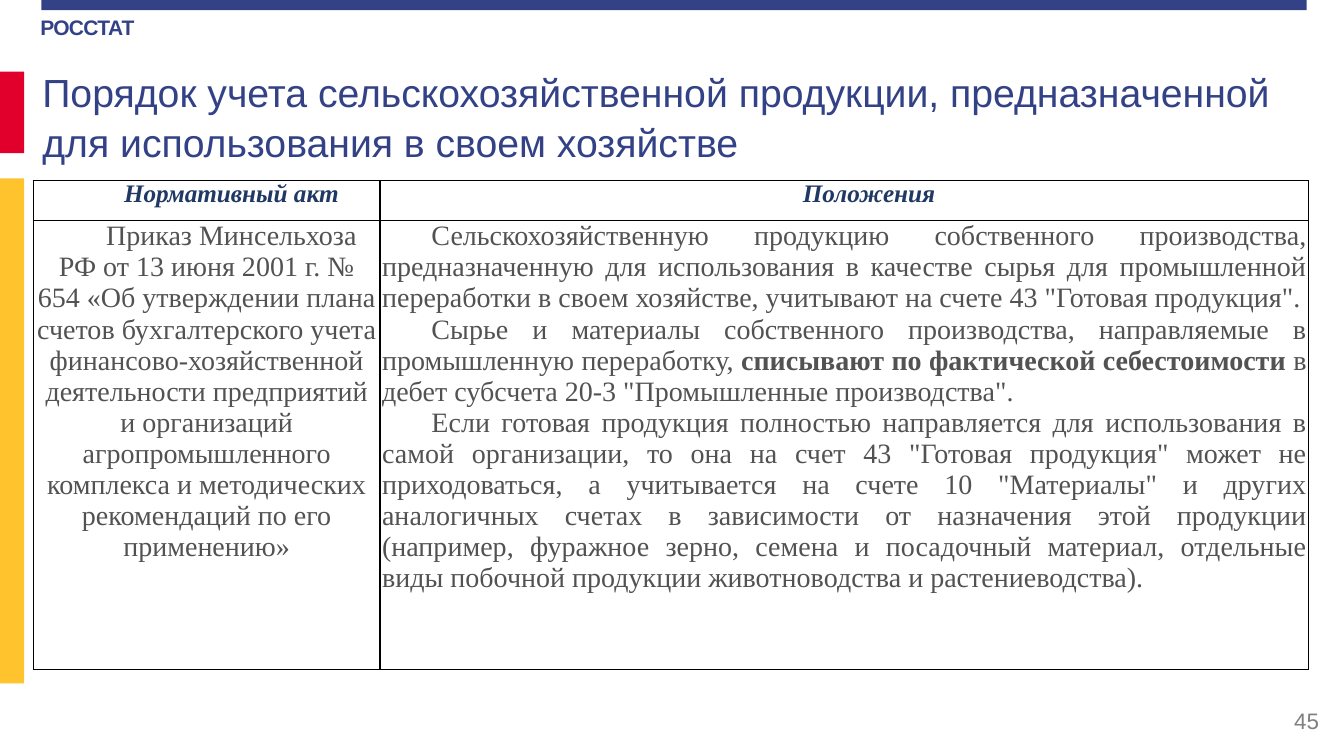
"""Build the slide on accounting for farm produce kept for own use."""
from lxml import etree
from pptx import Presentation
from pptx.dml.color import RGBColor
from pptx.enum.shapes import MSO_SHAPE
from pptx.enum.text import MSO_ANCHOR, MSO_AUTO_SIZE, PP_ALIGN
from pptx.oxml.ns import qn
from pptx.util import Inches, Pt

RECTANGLE = MSO_SHAPE.RECTANGLE
TOP, MIDDLE = MSO_ANCHOR.TOP, MSO_ANCHOR.MIDDLE
LEFT, CENTER = PP_ALIGN.LEFT, PP_ALIGN.CENTER
RIGHT, JUSTIFY = PP_ALIGN.RIGHT, PP_ALIGN.JUSTIFY
NO_AUTOFIT = MSO_AUTO_SIZE.NONE
SANS, SERIF = "Arial", "Times New Roman"
NAVY, RED, YELLOW = "334286", "E1002B", "FFC32E"
HEADING, BODY, GRAY, BLACK = "203864", "525252", "808080", "000000"


def color(value):
    """Turn a hex string into a colour."""
    return RGBColor.from_string(value)


def add_span(para, text, face, size, ink, bold=False, italic=False):
    """Add one formatted run to a paragraph."""
    span = para.add_run()
    span.text = text
    span.font.name, span.font.size = face, Pt(size)
    span.font.bold, span.font.italic = bold, italic
    span.font.color.rgb = color(ink)
    return span


deck = Presentation()
deck.slide_width, deck.slide_height = Inches(13.33), Inches(7.5)
page = deck.slides.add_slide(deck.slide_layouts[5])

bars = [
    (0.41, 0, 12.55, 0.1, NAVY),
    (0, 0.71, 0.24, 0.81, RED),
    (0, 1.77, 0.24, 5.01, YELLOW),
]
for *place, fill in bars:
    bar = page.shapes.add_shape(RECTANGLE, *map(Inches, place))
    bar.shadow.inherit = False
    bar.fill.solid()
    bar.fill.fore_color.rgb = color(fill)
    bar.line.fill.background()

agency = page.shapes.add_textbox(*map(Inches, (0.4, 0.13, 1.15, 0.32))).text_frame
agency.word_wrap = True
agency.margin_left = agency.margin_right = agency.margin_bottom = 0
agency.margin_top = Inches(0.01)
span = add_span(agency.paragraphs[0], "РОССТАТ", SANS, 15, NAVY, bold=True)
span.font._element.set("spc", "-50")

number = page.shapes.add_textbox(*map(Inches, (10.18, 6.95, 3, 0.4))).text_frame
number.word_wrap = True
number.vertical_anchor = MIDDLE
number.paragraphs[0].alignment = RIGHT
add_span(number.paragraphs[0], "45", SANS, 16, GRAY)

title = page.shapes.title
title.left, title.top, title.width, title.height = map(Inches, (0.32, 0.59, 12.66, 1.02))
title.text_frame.auto_size = NO_AUTOFIT
title.text_frame.word_wrap = True
title.text_frame.vertical_anchor = TOP
heading = title.text_frame.paragraphs[0]
heading.alignment = LEFT
heading.line_spacing = 1.07
add_span(
    heading,
    "Порядок учета сельскохозяйственной продукции, предназначенной "
    "для использования в своем хозяйстве",
    SANS, 28, NAVY,
)

columns, rows = (3.44, 9.21), (0.4, 4.45)
headers = ["Нормативный акт", "Положения"]
act = (
    "Приказ Минсельхоза РФ от 13 июня 2001 г. № 654 «Об утверждении плана счетов "
    "бухгалтерского учета финансово-хозяйственной деятельности предприятий и организаций "
    "агропромышленного комплекса и методических рекомендаций по его применению»"
)
provisions = [
    [("Сельскохозяйственную продукцию собственного производства, предназначенную для "
      "использования в качестве сырья для промышленной переработки в своем хозяйстве, "
      'учитывают на счете 43 "Готовая продукция".', False)],
    [("Сырье и материалы собственного производства, направляемые в промышленную "
      "переработку, ", False),
     ("списывают по фактической себестоимости", True),
     (' в дебет субсчета 20-3 "Промышленные производства".', False)],
    [("Если готовая продукция полностью направляется для использования в самой "
      'организации, то она на счет 43 "Готовая продукция" может не приходоваться, а '
      'учитывается на счете 10 "Материалы" и других аналогичных счетах в зависимости от '
      "назначения этой продукции (например, фуражное зерно, семена и посадочный материал, "
      "отдельные виды побочной продукции животноводства и растениеводства).", False)],
]
contents = [
    [[[(header, True)]] for header in headers],
    [[[(act, False)]], provisions],
]

frame = page.shapes.add_table(
    len(rows), len(columns), Inches(0.33), Inches(1.79),
    Inches(sum(columns)), Inches(sum(rows)),
)
table = frame.table
table.horz_banding = False
for column, width in zip(table.columns, columns):
    column.width = Inches(width)

for row_index, height in enumerate(rows):
    table.rows[row_index].height = Inches(height)
    is_header = row_index == 0
    size, ink = (18, HEADING) if is_header else (20, BODY)
    for column_index, paragraphs in enumerate(contents[row_index]):
        cell = table.cell(row_index, column_index)
        cell.margin_left = cell.margin_right = Inches(0.02)
        cell.margin_top = cell.margin_bottom = 0
        cell.vertical_anchor = TOP
        properties = cell._tc.get_or_add_tcPr()
        for side in ("lnL", "lnR", "lnT", "lnB"):
            border = etree.SubElement(properties, qn(f"a:{side}"), w=str(Pt(1)))
            paint = etree.SubElement(border, qn("a:solidFill"))
            etree.SubElement(paint, qn("a:srgbClr"), val=BLACK)
        cell.fill.background()
        for index, spans in enumerate(paragraphs):
            body = cell.text_frame
            para = body.add_paragraph() if index else body.paragraphs[0]
            para.alignment = JUSTIFY if paragraphs is provisions else CENTER
            para._p.get_or_add_pPr().set("indent", str(Inches(0.49)))
            for text, bold in spans:
                add_span(para, text, SERIF, size, ink, bold, is_header)

deck.save("out.pptx")
